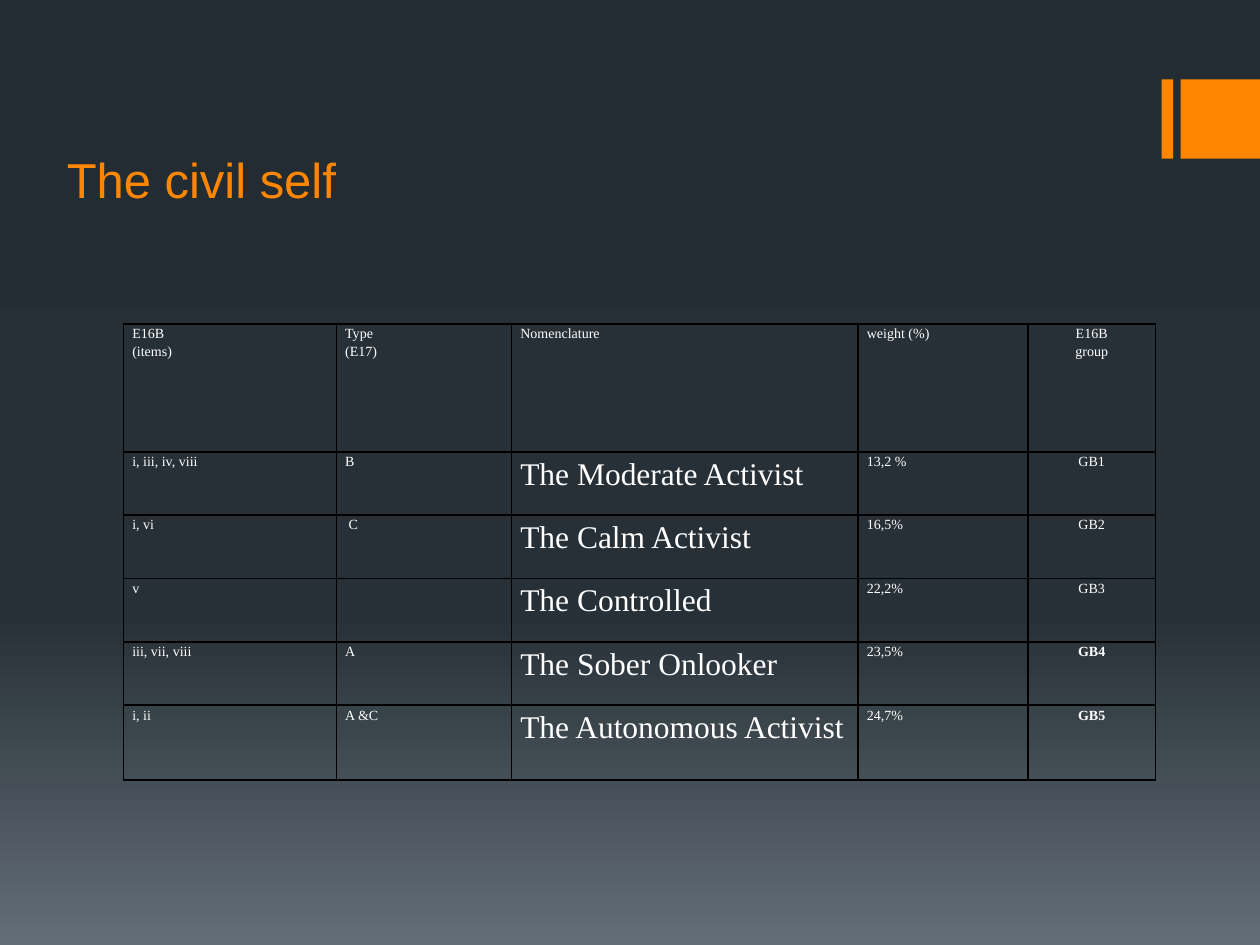
from copy import deepcopy

from lxml import etree
from pptx import Presentation, util as u
from pptx.dml.color import RGBColor
from pptx.enum import shapes, text
from pptx.oxml import ns

COLORS = {
    "night": "242C33",
    "slate": "273037",
    "mist": "636D76",
    "accent": "FF8600",
    "ink": "FFFFFF",
    "rule": "000000",
}
BACKDROP = [(0, "night"), (0.65, "slate"), (1, "mist")]
WIDTH, HEIGHT = u.Inches(10), u.Inches(7.5)
COLUMNS = [1.69, 1.39, 2.75, 1.35, 1.01]
ROWS = [1.01, 0.5, 0.5, 0.5, 0.5, 0.59]
HEADINGS = ["E16B\n(items)", "Type\n(E17)", "Nomenclature", "weight (%)", "E16B\ngroup"]
TYPES = [
    ["i, iii, iv, viii", "B", "The Moderate Activist", "13,2 %", "GB1"],
    ["i, vi", " C", "The Calm Activist", "16,5%", "GB2"],
    ["v", "", "The Controlled", "22,2%", "GB3"],
    ["iii, vii, viii", "A", "The Sober Onlooker", "23,5%", "GB4"],
    ["i, ii", "Α &C", "The Autonomous Activist", "24,7%", "GB5"],
]
BOLD_GROUPS = {"GB4", "GB5"}
NOMENCLATURE, GROUP = 2, 4


def rgb(name):
    return RGBColor.from_string(COLORS[name])


def apply(target, formats):
    for name, value in formats.items():
        setattr(target, name, value)


def style_font(font, color, **formats):
    apply(font, formats)
    font.color.rgb = rgb(color)


def paint_backdrop(slide):
    fill = slide.background.fill
    fill.gradient()
    fill.gradient_angle = 270
    first = slide.element.find(".//" + ns.qn("a:gs"))
    first.addnext(deepcopy(first))
    for stop, (position, color) in zip(fill.gradient_stops, BACKDROP):
        stop.position = position
        stop.color.rgb = rgb(color)


def add_corner_tab(slide, left, top, width, height):
    gap = u.Inches(0.06)
    strip = u.Inches(0.09)
    block = left + strip + gap
    for x, span in ((left, strip), (block, left + width - block)):
        bar = slide.shapes.add_shape(shapes.MSO_SHAPE.RECTANGLE, x, top, span, height)
        bar.shadow.inherit = False
        bar.fill.solid()
        bar.fill.fore_color.rgb = rgb("accent")
        bar.line.fill.background()


def fill_title(slide, left, top, width, height):
    title = slide.shapes.title
    apply(title, {"left": left, "top": top, "width": width, "height": height})
    title.text_frame.text = "The civil self"
    title.text_frame.vertical_anchor = text.MSO_ANCHOR.BOTTOM
    heading = title.text_frame.paragraphs[0]
    heading.alignment = text.PP_ALIGN.LEFT
    style_font(heading.font, "accent", name="Arial", size=u.Pt(28))


def draw_borders(cell):
    properties = cell._tc.get_or_add_tcPr()
    for side in ("lnL", "lnR", "lnT", "lnB"):
        line = etree.SubElement(properties, ns.qn("a:" + side), w=str(u.Pt(1)))
        solid = etree.SubElement(line, ns.qn("a:solidFill"))
        etree.SubElement(solid, ns.qn("a:srgbClr"), val=COLORS["rule"])


def fill_cell(cell, words, large, centred):
    draw_borders(cell)
    cell.fill.background()
    inset = u.Inches(0.07)
    apply(cell, {"margin_left": inset, "margin_right": inset, "margin_top": 0, "margin_bottom": 0})
    cell.text = words
    alignment = text.PP_ALIGN.CENTER if centred else text.PP_ALIGN.JUSTIFY
    for paragraph in cell.text_frame.paragraphs:
        apply(paragraph, {"alignment": alignment, "line_spacing": 1.15})
        for run in paragraph.runs:
            style_font(run.font, "ink", name="Times New Roman",
                       size=u.Pt(18 if large else 8), bold=words in BOLD_GROUPS)


def add_type_table(slide, left, top, width, height):
    frame = slide.shapes.add_table(len(ROWS), len(COLUMNS), left, top, width, height)
    table = frame.table
    apply(table, {"first_row": False, "horz_banding": False})
    for column, share in zip(table.columns, COLUMNS):
        column.width = int(width * share / sum(COLUMNS))
    for row, share in zip(table.rows, ROWS):
        row.height = int(height * share / sum(ROWS))
    for r, entries in enumerate([HEADINGS] + TYPES):
        for c, words in enumerate(entries):
            fill_cell(table.cell(r, c), words, r > 0 and c == NOMENCLATURE, c == GROUP)


def main():
    deck = Presentation()
    apply(deck, {"slide_width": WIDTH, "slide_height": HEIGHT})
    slide = deck.slides.add_slide(deck.slide_layouts[5])
    paint_backdrop(slide)
    regions = [
        (add_corner_tab, (9.22, 0.63, 0.78, 0.63)),
        (fill_title, (0.43, 0.44, 8, 1.26)),
        (add_type_table, (0.98, 2.57, 8.19, 3.62)),
    ]
    for place, box in regions:
        place(slide, *map(u.Inches, box))
    deck.save("out.pptx")


if __name__ == "__main__":
    main()
